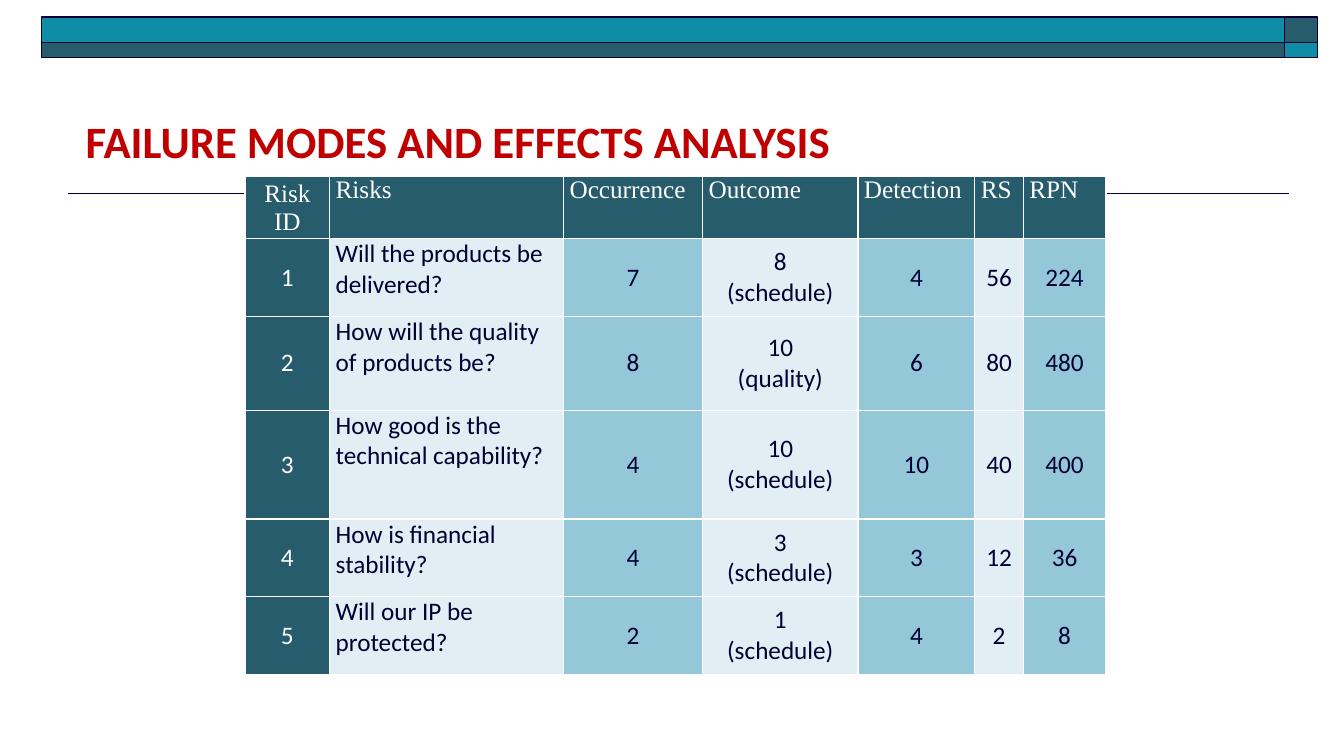
from pptx import Presentation
from pptx.dml.color import RGBColor
from pptx.enum.shapes import MSO_CONNECTOR, MSO_SHAPE
from pptx.enum.text import MSO_ANCHOR, PP_ALIGN
from pptx.oxml.ns import qn
from pptx.util import Inches, Pt
from lxml.etree import SubElement

NAVY = RGBColor(0x00, 0x00, 0x33)
SLATE = RGBColor(0x27, 0x5C, 0x6D)
TEAL = RGBColor(0x10, 0x8D, 0xA6)
RED = RGBColor(0xC0, 0x00, 0x00)
WHITE = RGBColor(0xFF, 0xFF, 0xFF)
PALE = RGBColor(0xE1, 0xEE, 0xF3)
SKY = RGBColor(0x94, 0xC8, 0xD9)

# Banner grid: column and row edges, in inches
BANNER_COLUMNS = (0.41, 12.74, 13.07)
BANNER_ROWS = (0.17, 0.42, 0.57)

# Table grid, in inches
TABLE_LEFT, TABLE_TOP = 2.43, 1.75
COLUMN_WIDTHS = (0.84, 2.32, 1.38, 1.54, 1.16, 0.48, 0.82)
ROW_HEIGHTS = (0.62, 0.77, 0.93, 1.08, 0.77, 0.77)
RISK_COLUMN = 1

RISK_ROWS = (
    ("Risk ID", "Risks", "Occurrence", "Outcome", "Detection", "RS", "RPN"),
    ("1", "Will the products be delivered?", "7", "8\n(schedule)", "4", "56", "224"),
    ("2", "How will the quality of products be?", "8", "10\n(quality)", "6", "80", "480"),
    ("3", "How good is the technical capability?", "4", "10\n(schedule)", "10", "40", "400"),
    ("4", "How is financial stability?", "4", "3\n(schedule)", "3", "12", "36"),
    ("5", "Will our IP be protected?", "2", "1\n(schedule)", "4", "2", "8"),
)


def add_span(para, text, font_name, size, color, bold=False):
    span = para.add_run()
    span.text = text
    span.font.name = font_name
    span.font.size = Pt(size)
    span.font.color.rgb = color
    span.font.bold = bold


def add_rule(page, left, right, top):
    rule = page.shapes.add_connector(
        MSO_CONNECTOR.STRAIGHT, Inches(right), Inches(top), Inches(left), Inches(top))
    rule.line.color.rgb = NAVY
    rule.line.width = Pt(1)
    SubElement(rule._element.spPr, qn("a:effectLst"))


def add_banner(page):
    # Two by two blocks in alternating colours
    for row in range(2):
        for column in range(2):
            left, right = BANNER_COLUMNS[column:column + 2]
            top, bottom = BANNER_ROWS[row:row + 2]
            block = page.shapes.add_shape(
                MSO_SHAPE.RECTANGLE, Inches(left), Inches(top),
                Inches(right - left), Inches(bottom - top))
            block.shadow.inherit = False
            block.fill.solid()
            block.fill.fore_color.rgb = SLATE if (row + column) % 2 else TEAL
            block.line.color.rgb = NAVY
            block.line.width = Pt(1)


def add_title(page, text):
    box = page.shapes.add_textbox(Inches(0.75), Inches(1.08), Inches(10.58), Inches(0.37))
    box.text_frame.word_wrap = True
    para = box.text_frame.paragraphs[0]
    para.space_before = Pt(3)
    add_span(para, text, "Calibri", 32, RED, bold=True)


def set_borders(cell):
    properties = cell._tc.get_or_add_tcPr()
    for index, side in enumerate(("a:lnL", "a:lnR", "a:lnT", "a:lnB")):
        border = properties.makeelement(qn(side), {"w": str(Pt(1))})
        fill = SubElement(border, qn("a:solidFill"))
        SubElement(fill, qn("a:srgbClr"), val=str(WHITE))
        properties.insert(index, border)


def fill_cell(cell, text, row, column):
    is_header = row == 0
    is_dark = is_header or column == 0
    is_centered = column == 0 or not (is_header or column == RISK_COLUMN)

    cell.margin_left = cell.margin_right = Inches(0.06)
    cell.margin_top = cell.margin_bottom = 0
    cell.vertical_anchor = MSO_ANCHOR.MIDDLE if is_centered else MSO_ANCHOR.TOP
    cell.fill.solid()
    cell.fill.fore_color.rgb = SLATE if is_dark else PALE if column % 2 else SKY
    set_borders(cell)

    frame = cell.text_frame
    for index, line in enumerate(text.split("\n")):
        para = frame.add_paragraph() if index else frame.paragraphs[0]
        para.alignment = PP_ALIGN.CENTER if is_centered else PP_ALIGN.LEFT
        add_span(para, line, "Times New Roman" if is_header else "Calibri", 18,
                 WHITE if is_dark else NAVY)


def add_risk_table(page):
    table = page.shapes.add_table(
        len(ROW_HEIGHTS), len(COLUMN_WIDTHS), Inches(TABLE_LEFT), Inches(TABLE_TOP),
        Inches(sum(COLUMN_WIDTHS)), Inches(sum(ROW_HEIGHTS))).table
    for column, width in zip(table.columns, COLUMN_WIDTHS):
        column.width = Inches(width)
    for row, height in zip(table.rows, ROW_HEIGHTS):
        row.height = Inches(height)
    for row, texts in enumerate(RISK_ROWS):
        for column, text in enumerate(texts):
            fill_cell(table.cell(row, column), text, row, column)


def main():
    deck = Presentation()
    deck.slide_width, deck.slide_height = Inches(13.33), Inches(7.5)
    page = deck.slides.add_slide(deck.slide_layouts[6])

    # Frame of the slide
    add_rule(page, 0.67, 12.78, 1.92)
    add_banner(page)

    # Content
    add_title(page, "FAILURE MODES AND EFFECTS ANALYSIS")
    add_risk_table(page)
    deck.save("out.pptx")


if __name__ == "__main__":
    main()
